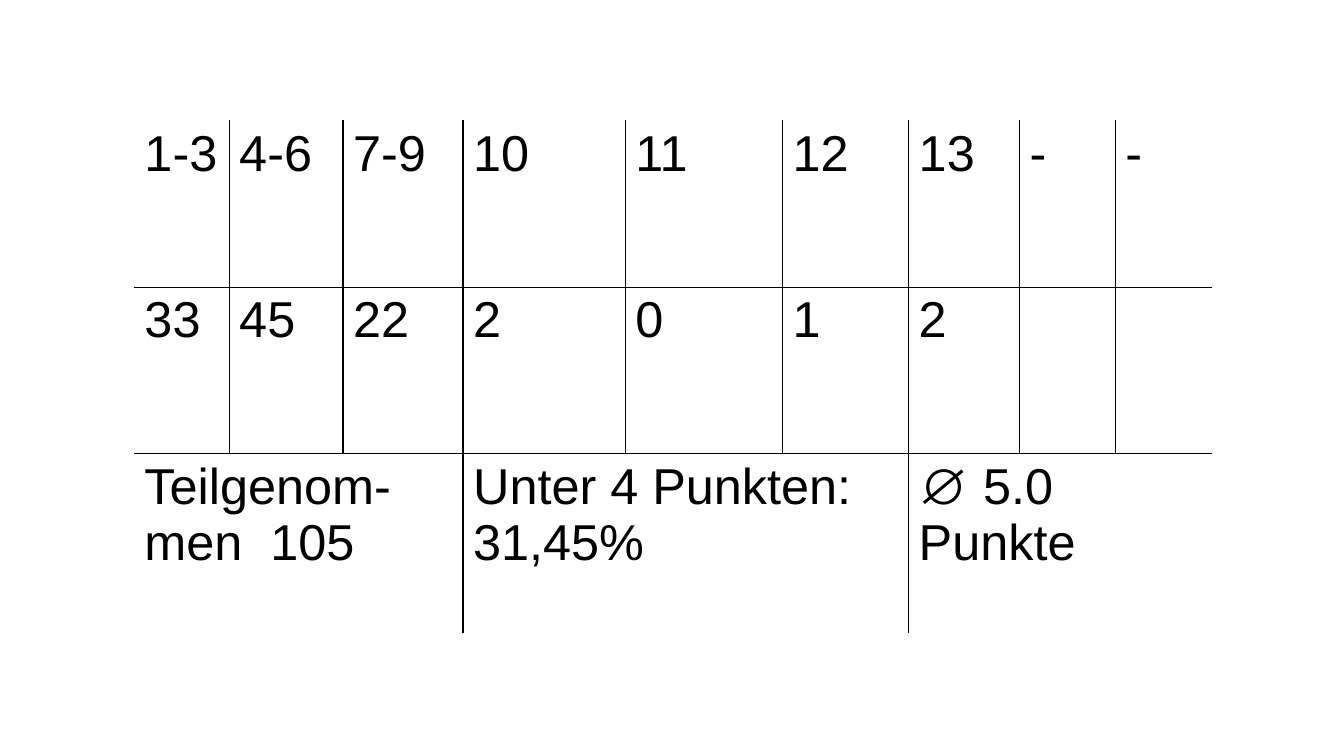
from lxml import etree
from pptx import Presentation
from pptx.dml.color import RGBColor
from pptx.oxml.ns import qn
from pptx.util import Inches, Pt

BLACK = RGBColor(0x00, 0x00, 0x00)
WHITE = RGBColor(0xFF, 0xFF, 0xFF)
FONT = {"name": "Arial", "size": Pt(36)}
BORDER_WIDTH = Pt(1)

COLUMN_WIDTHS = [0.94, 1.13, 1.19, 1.61, 1.56, 1.25, 1.1, 0.95, 0.95]
ROW_HEIGHTS = [1.65, 1.65, 1.79]
POINTS = ["1-3", "4-6", "7-9", "10", "11", "12", "13", "-", "-"]
COUNTS = ["33", "45", "22", "2", "0", "1", "2", "", ""]
SUMMARY = ["Teilgenom-men  105", "Unter 4 Punkten:\n31,45% ", "∅ 5.0 Punkte"]
SUMMARY_SPAN = len(POINTS) // len(SUMMARY)


def format_cell(cell, text, borders):
    cell.fill.solid()
    cell.fill.fore_color.rgb = WHITE
    if text:
        cell.text = text
        for para in cell.text_frame.paragraphs:
            for span in para.runs:
                for name, value in FONT.items():
                    setattr(span.font, name, value)
                span.font.color.rgb = BLACK
    # Borders come before the fill in the cell properties
    properties = cell._tc.get_or_add_tcPr()
    for position, (side, color) in enumerate(borders.items()):
        line = etree.Element(qn(f"a:ln{side}"), w=str(BORDER_WIDTH))
        solid = etree.SubElement(line, qn("a:solidFill"))
        etree.SubElement(solid, qn("a:srgbClr"), val=str(color))
        properties.insert(position, line)


# Page
deck = Presentation()
deck.slide_width, deck.slide_height = Inches(13.33), Inches(7.5)
page = deck.slides.add_slide(deck.slide_layouts[6])

# Table grid
row_count, column_count = len(ROW_HEIGHTS), len(COLUMN_WIDTHS)
frame = page.shapes.add_table(
    row_count, column_count, deck.slide_width // 10, Inches(1.2),
    Inches(sum(COLUMN_WIDTHS)), Inches(sum(ROW_HEIGHTS)))
table = frame.table
table.first_row = table.horz_banding = False
for column, width in zip(table.columns, COLUMN_WIDTHS):
    column.width = Inches(width)
for row, height in zip(table.rows, ROW_HEIGHTS):
    row.height = Inches(height)

# Cells: black lines inside the grid, white ones around it
for row, (texts, span_width) in enumerate(
        [(POINTS, 1), (COUNTS, 1), (SUMMARY, SUMMARY_SPAN)]):
    for index, text in enumerate(texts):
        first = index * span_width
        last = first + span_width - 1
        cell = table.cell(row, first)
        if span_width > 1:
            cell.merge(table.cell(row, last))
        outside = {"L": first == 0, "R": last == column_count - 1,
                   "T": row == 0, "B": row == row_count - 1}
        format_cell(cell, text, {side: WHITE if outer else BLACK
                                 for side, outer in outside.items()})

deck.save("out.pptx")
